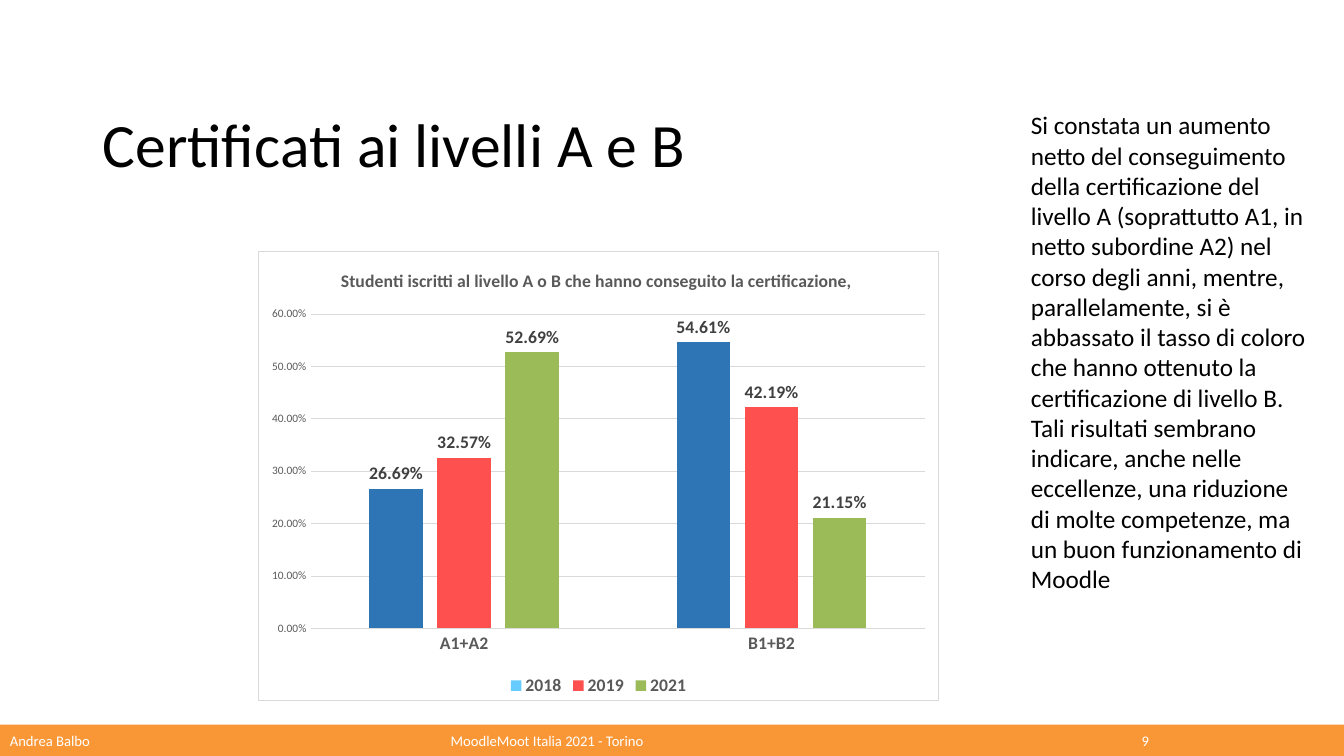
from lxml.etree import fromstring
from pptx import Presentation
from pptx.chart.data import CategoryChartData as ChartData
from pptx.dml.color import RGBColor as Rgb
from pptx.enum.chart import XL_CHART_TYPE as Kind, XL_LABEL_POSITION as Spot
from pptx.enum.chart import XL_LEGEND_POSITION as Side, XL_TICK_MARK as Tick
from pptx.enum.shapes import MSO_SHAPE as Shape
from pptx.enum.text import MSO_ANCHOR as Anchor
from pptx.util import Cm, Pt

HUES = {
    "bar": "F99737", "white": "FFFFFF", "black": "000000", "gray": "595959",
    "dark": "404040", "grid": "D9D9D9", "blue": "2E75B6", "sky": "66CCFF",
    "red": "FF5050", "green": "9BBB59",
}
FACE = "Calibri"
FOOT = (18.26, 0.79)
NOTE = (
    "Si constata un aumento netto del conseguimento della certificazione del "
    "livello A (soprattutto A1, in netto subordine A2) nel corso degli anni, "
    "mentre, parallelamente, si è abbassato il tasso di coloro che hanno "
    "ottenuto la certificazione di livello B. Tali risultati sembrano "
    "indicare, anche nelle eccellenze, una riduzione di molte competenze, ma "
    "un buon funzionamento di Moodle"
)
FRAME = (
    '<c:spPr xmlns:c="http://schemas.openxmlformats.org/drawingml/2006/chart" '
    'xmlns:a="http://schemas.openxmlformats.org/drawingml/2006/main">'
    '<a:solidFill><a:srgbClr val="{white}"/></a:solidFill>'
    '<a:ln w="8500"><a:solidFill><a:srgbClr val="{grid}"/></a:solidFill></a:ln>'
    '</c:spPr>'
)


def hue(name):
    """Return the named colour."""
    return Rgb.from_string(HUES[name])


def style(font, size, color, bold=False):
    """Set face, size, colour and weight of a font."""
    font.name, font.size, font.bold = FACE, Pt(size), bold
    font.color.rgb = hue(color)


def paint(fill, color):
    """Give a solid fill."""
    fill.solid()
    fill.fore_color.rgb = hue(color)


def rule(line):
    """Draw a thin pale line."""
    line.color.rgb = hue("grid")
    line.width = Pt(0.67)


def write(slide, text, left, top, width, height, size=18, color="black",
          anchor=Anchor.TOP, lead=None):
    """Add a wrapped text box."""
    box = slide.shapes.add_textbox(Cm(left), Cm(top), Cm(width), Cm(height))
    frame = box.text_frame
    frame.word_wrap = True
    frame.vertical_anchor = anchor
    para = frame.paragraphs[0]
    para.line_spacing = lead
    run = para.add_run()
    run.text = text
    style(run.font, size, color)


def footer(slide):
    """Add the bottom band with its three texts."""
    top, height = FOOT
    band = slide.shapes.add_shape(Shape.RECTANGLE, 0, Cm(top), Cm(33.87), Cm(height))
    band.shadow.inherit = False
    paint(band.fill, "bar")
    band.line.fill.background()
    for text, left, width in (
        ("Andrea Balbo", 0, 10.36),
        ("MoodleMoot Italia 2021 - Torino", 11.11, 8),
        ("9", 28.52, 2),
    ):
        write(slide, text, left, top, width, height, size=10.5,
              color="white", anchor=Anchor.MIDDLE)


def axes(chart):
    """Format both axes."""
    cat, val = chart.category_axis, chart.value_axis
    for axis, size, bold in ((cat, 12.6, True), (val, 8.1, False)):
        axis.major_tick_mark = axis.minor_tick_mark = Tick.NONE
        style(axis.tick_labels.font, size, "gray", bold)
    rule(cat.format.line)
    val.format.line.fill.background()
    rule(val.major_gridlines.format.line)
    val.minimum_scale, val.maximum_scale, val.major_unit = 0, 0.6, 0.1
    val.tick_labels.number_format = "0.00%"
    val.tick_labels.number_format_is_linked = False


def bars(plot):
    """Format columns and their labels."""
    plot.gap_width, plot.overlap = 219, -27
    plot.vary_by_categories = False
    for row, color in zip(plot.series, ("sky", "red", "green")):
        paint(row.format.fill, color)
        tags = row.data_labels
        tags.show_value = True
        tags.position = Spot.OUTSIDE_END
        tags.number_format, tags.number_format_is_linked = "0.00%", False
        style(tags.font, 12.6, "dark", True)
    for index in range(2):
        paint(plot.series[0].points[index].format.fill, "blue")


def graph(slide):
    """Add the column chart of certified students."""
    data = ChartData(number_format="0.00%")
    data.categories = ["A1+A2", "B1+B2"]
    data.add_series("2018", (0.2669, 0.5461))
    data.add_series("2019", (0.3257, 0.4219))
    data.add_series("2021", (0.5269, 0.2115))
    chart = slide.shapes.add_chart(Kind.COLUMN_CLUSTERED, Cm(6.5), Cm(6.32),
                                   Cm(17.17), Cm(11.35), data).chart
    style(chart.font, 10, "black")
    chart.has_title = True
    run = chart.chart_title.text_frame.paragraphs[0].add_run()
    run.text = "Studenti iscritti al livello A o B che hanno conseguito la certificazione, "
    style(run.font, 12.6, "gray", True)
    chart.chart_title.include_in_layout = False
    chart.has_legend = True
    chart.legend.position = Side.BOTTOM
    chart.legend.include_in_layout = False
    style(chart.legend.font, 12.6, "gray", True)
    axes(chart)
    bars(chart.plots[0])
    chart.element.find("{*}chart").addnext(fromstring(FRAME.format(**HUES)))


def main():
    """Build and save the slide."""
    deck = Presentation()
    deck.slide_width, deck.slide_height = Cm(33.87), Cm(19.05)
    slide = deck.slides.add_slide(deck.slide_layouts[6])
    footer(slide)
    write(slide, "Certificati ai livelli A e B", 2.34, 1.88, 29.21, 3.68,
          size=44, anchor=Anchor.MIDDLE, lead=0.9)
    graph(slide)
    write(slide, NOTE, 25.73, 2.64, 7.52, 12.57)
    deck.save("out.pptx")


if __name__ == "__main__":
    main()
